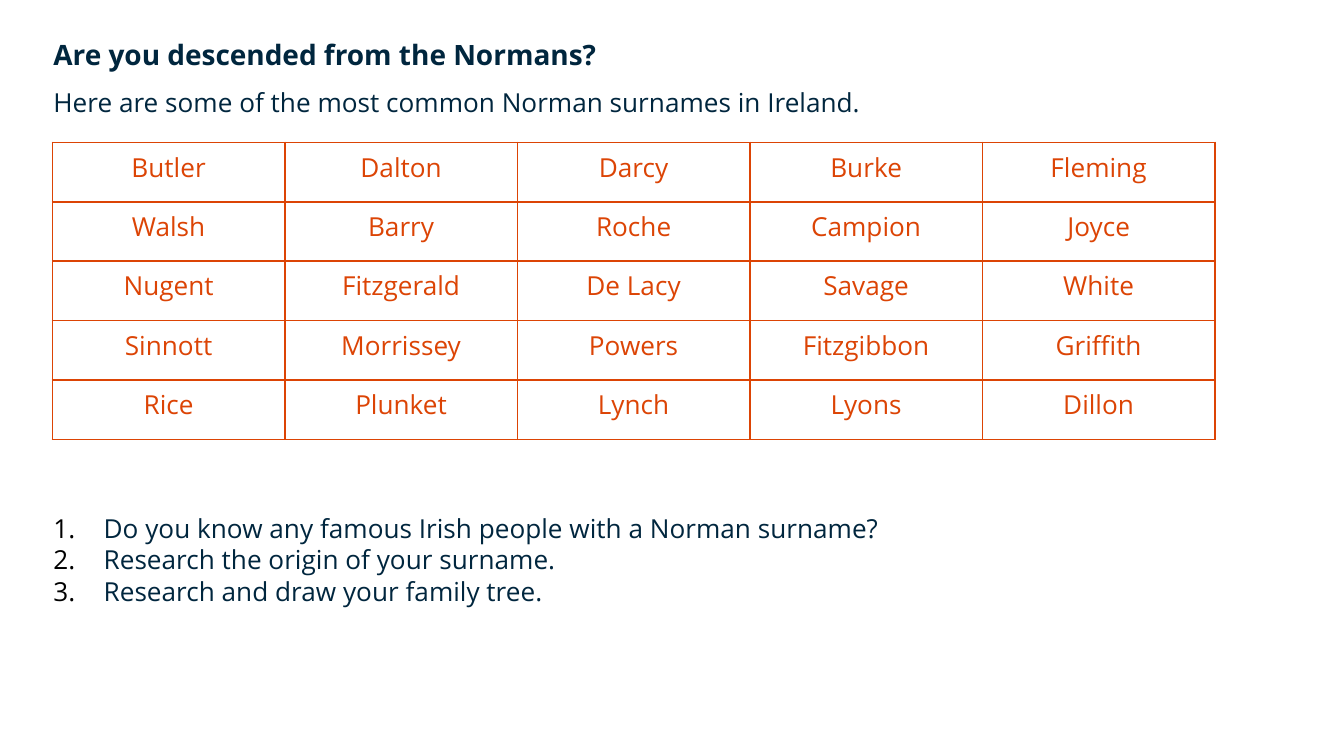
from dataclasses import dataclass

import pptx
import pptx.dml.color
import pptx.enum.text
import pptx.oxml.ns
import pptx.util
from lxml import etree
from pptx.util import Cm


@dataclass(frozen=True)
class Theme:
    font: str = "Open Sans"
    navy: str = "00263E"
    orange: str = "DC4405"
    black: str = "000000"
    heading: int = 15
    body: int = 14
    border: int = 1


THEME = Theme()


def add_xml(parent, tag, **attributes):
    return etree.SubElement(parent, pptx.oxml.ns.qn(tag), attributes)


def write(frame, *lines, size=THEME.body, color=THEME.navy, bold=False,
          align=None, spacing=None, after=None, numbered=False):
    """Fill a text frame with one paragraph per line."""
    frame.word_wrap = True
    for index, line in enumerate(lines):
        paragraph = frame.add_paragraph() if index else frame.paragraphs[0]
        if align is not None:
            paragraph.alignment = align
        if spacing:
            paragraph.line_spacing = spacing
        if after:
            paragraph.space_after = pptx.util.Pt(after)
        if numbered:
            properties = paragraph._p.get_or_add_pPr()
            indent = Cm(0.95)
            properties.set("marL", str(indent))
            properties.set("indent", str(-indent))
            add_xml(add_xml(properties, "a:buClr"), "a:srgbClr", val=THEME.black)
            add_xml(properties, "a:buFont", typeface=THEME.font)
            add_xml(properties, "a:buAutoNum", type="arabicPeriod")
        run = paragraph.add_run()
        run.text = line
        run.font.name = THEME.font
        run.font.size = pptx.util.Pt(size)
        run.font.bold = bold
        run.font.color.rgb = pptx.dml.color.RGBColor.from_string(color)


presentation = pptx.Presentation()
presentation.slide_width = Cm(25.4)
presentation.slide_height = Cm(14.28)
slide = presentation.slides.add_slide(presentation.slide_layouts[6])

# Heading and introduction
text_left, text_width = Cm(0.76), Cm(29.21)
heading = slide.shapes.add_textbox(text_left, Cm(0.58), Cm(12.7), Cm(0.89))
write(heading.text_frame, "Are you descended from the Normans?",
      size=THEME.heading, bold=True)

introduction = slide.shapes.add_textbox(text_left, Cm(1.47), text_width, Cm(0.86))
write(introduction.text_frame,
      "Here are some of the most common Norman surnames in Ireland.",
      spacing=1.07, after=8)

# Surname grid
surnames = [
    ["Butler", "Dalton", "Darcy", "Burke", "Fleming"],
    ["Walsh", "Barry", "Roche", "Campion", "Joyce"],
    ["Nugent", "Fitzgerald", "De Lacy", "Savage", "White"],
    ["Sinnott", "Morrissey", "Powers", "Fitzgibbon", "Griffith"],
    ["Rice", "Plunket", "Lynch", "Lyons", "Dillon"],
]
surname_grid = slide.shapes.add_table(
    len(surnames), len(surnames[0]), Cm(0.99), Cm(2.69), Cm(21.97), Cm(5.61)).table
surname_grid.first_row = False
surname_grid.horz_banding = False
for row, names in enumerate(surnames):
    for column, name in enumerate(names):
        cell = surname_grid.cell(row, column)
        write(cell.text_frame, name, color=THEME.orange,
              align=pptx.enum.text.PP_ALIGN.CENTER)
        cell_properties = cell._tc.get_or_add_tcPr()
        for side in ("a:lnL", "a:lnR", "a:lnT", "a:lnB"):
            border = add_xml(cell_properties, side,
                             w=str(pptx.util.Pt(THEME.border)))
            add_xml(add_xml(border, "a:solidFill"), "a:srgbClr", val=THEME.orange)
        cell.fill.background()

# Questions
questions = slide.shapes.add_textbox(text_left, Cm(9.55), text_width, Cm(2.06))
write(questions.text_frame,
      "Do you know any famous Irish people with a Norman surname?",
      "Research the origin of your surname.",
      "Research and draw your family tree.",
      numbered=True)

presentation.save("out.pptx")
